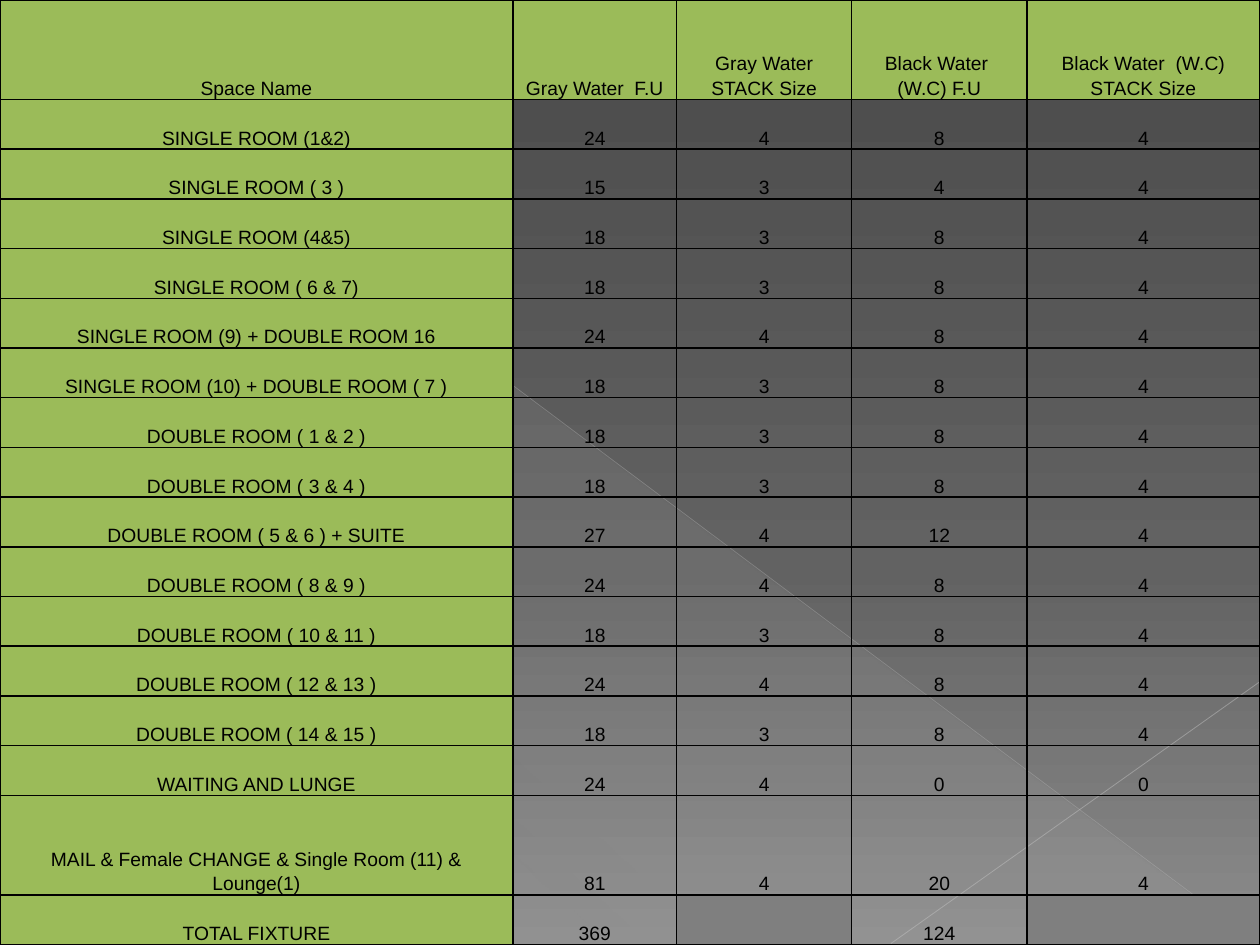
from typing import NamedTuple

from lxml.etree import SubElement
from pptx import Presentation
from pptx.dml.color import RGBColor
from pptx.enum.shapes import MSO_CONNECTOR, MSO_SHAPE
from pptx.enum.text import MSO_ANCHOR, PP_ALIGN
from pptx.oxml.ns import qn
from pptx.util import Cm, Pt

BLACK = RGBColor(0x00, 0x00, 0x00)
GREEN = RGBColor(0x9B, 0xBB, 0x59)
GRAY = RGBColor(0x7F, 0x7F, 0x7F)
BG_TOP = RGBColor(0x4A, 0x4A, 0x4A)
BG_MIDDLE = RGBColor(0x62, 0x62, 0x62)
BG_BOTTOM = RGBColor(0x8C, 0x8C, 0x8C)
SHEEN = RGBColor(0xD2, 0xD2, 0xD2)
LONG_LINE = RGBColor(0xBF, 0xBF, 0xBF)
SHORT_LINE = RGBColor(0xC6, 0xC6, 0xC6)

WIDTH, HEIGHT = 25.4, 19.05
COL_WIDTHS = (10.34, 3.3, 3.53, 3.53, 4.7)


class Stop(NamedTuple):
    position: int
    color: RGBColor
    opacity: int = 100


class Diagonal(NamedTuple):
    x1: float
    y1: float
    x2: float
    y2: float
    color: RGBColor
    width: float
    opacity: int


class Row(NamedTuple):
    space: str
    gray_fu: str
    gray_stack: str
    black_fu: str
    black_stack: str
    height: int = 1  # in row units


DIAGONALS = (
    Diagonal(0, 0.03, 25.37, 19.02, LONG_LINE, 0.39, 35),
    Diagonal(25.4, 13.74, 17.96, 19.02, SHORT_LINE, 0.47, 45),
)

ROWS = (
    Row("Space Name", "Gray Water  F.U", "Gray Water STACK Size",
        "Black Water  (W.C) F.U", "Black Water  (W.C) STACK Size", 2),
    Row("SINGLE ROOM (1&2)", "24", "4", "8", "4"),
    Row("SINGLE ROOM ( 3 )", "15", "3", "4", "4"),
    Row("SINGLE ROOM (4&5)", "18", "3", "8", "4"),
    Row("SINGLE ROOM ( 6 & 7)", "18", "3", "8", "4"),
    Row("SINGLE ROOM (9) + DOUBLE ROOM 16", "24", "4", "8", "4"),
    Row("SINGLE ROOM (10) + DOUBLE ROOM ( 7 )", "18", "3", "8", "4"),
    Row("DOUBLE ROOM ( 1 & 2 )", "18", "3", "8", "4"),
    Row("DOUBLE ROOM ( 3 & 4 )", "18", "3", "8", "4"),
    Row("DOUBLE ROOM ( 5 & 6 ) + SUITE", "27", "4", "12", "4"),
    Row("DOUBLE ROOM ( 8 & 9 )", "24", "4", "8", "4"),
    Row("DOUBLE ROOM ( 10 & 11 )", "18", "3", "8", "4"),
    Row("DOUBLE ROOM ( 12 & 13 )", "24", "4", "8", "4"),
    Row("DOUBLE ROOM ( 14 & 15 )", "18", "3", "8", "4"),
    Row("WAITING AND LUNGE", "24", "4", "0", "0"),
    Row("MAIL & Female CHANGE & Single Room (11) & Lounge(1)",
        "81", "4", "20", "4", 2),
    Row("TOTAL FIXTURE", "369", "", "124", ""),
)


def add_color(parent, color: RGBColor, opacity: int = 100) -> None:
    clr = SubElement(parent, qn("a:srgbClr"), val=str(color))
    if opacity < 100:
        SubElement(clr, qn("a:alpha"), val=str(opacity * 1000))


def set_gradient(fill, element, stops: tuple[Stop, ...], angle: int) -> None:
    """Give the fill inside element these stops; angle runs clockwise."""
    fill.gradient()
    grad = element.find(".//" + qn("a:gradFill"))
    for child in list(grad):
        grad.remove(child)
    gs_list = SubElement(grad, qn("a:gsLst"))
    for stop in stops:
        gs = SubElement(gs_list, qn("a:gs"), pos=str(stop.position * 1000))
        add_color(gs, stop.color, stop.opacity)
    SubElement(grad, qn("a:lin"), ang=str(angle * 60000), scaled="0")


def add_diagonal(s, d: Diagonal) -> None:
    line = s.shapes.add_connector(
        MSO_CONNECTOR.STRAIGHT, Cm(d.x1), Cm(d.y1), Cm(d.x2), Cm(d.y2))
    line.line.width = Pt(d.width)
    line.line.fill.solid()
    solid = line.element.spPr.find(".//" + qn("a:solidFill"))
    for child in list(solid):
        solid.remove(child)
    add_color(solid, d.color, d.opacity)
    SubElement(line.element.spPr, qn("a:effectLst"))


def format_cell(cell, text: str, is_label: bool) -> None:
    cell.margin_left = cell.margin_right = Cm(0.18)
    cell.margin_top = cell.margin_bottom = 0
    cell.vertical_anchor = MSO_ANCHOR.BOTTOM

    # Borders come before the fill in the cell properties
    tc_pr = cell._tc.get_or_add_tcPr()
    for side in ("lnL", "lnR", "lnT", "lnB"):
        ln = SubElement(tc_pr, qn(f"a:{side}"), w=str(Pt(1)))
        add_color(SubElement(ln, qn("a:solidFill")), BLACK)
    if is_label or not text:
        cell.fill.solid()
        cell.fill.fore_color.rgb = GREEN if is_label else GRAY
    else:
        cell.fill.background()

    if text:
        p = cell.text_frame.paragraphs[0]
        p.text = text
        p.alignment = PP_ALIGN.CENTER
        p.line_spacing = 1.15
        font = p.runs[0].font
        font.name, font.size = "Arial", Pt(11)
        font.color.rgb = BLACK


def add_fixture_table(s) -> None:
    frame = s.shapes.add_table(
        len(ROWS), len(COL_WIDTHS), 0, 0, Cm(WIDTH), Cm(HEIGHT))
    table = frame.table
    table.first_row = table.horz_banding = False
    for column, width in zip(table.columns, COL_WIDTHS):
        column.width = Cm(width)
    unit = HEIGHT / sum(row.height for row in ROWS)
    for i, row in enumerate(ROWS):
        table.rows[i].height = Cm(unit * row.height)
        for j, text in enumerate(row[:len(COL_WIDTHS)]):
            format_cell(table.cell(i, j), text, i == 0 or j == 0)


def main() -> None:
    prs = Presentation()
    prs.slide_width, prs.slide_height = Cm(WIDTH), Cm(HEIGHT)
    s = prs.slides.add_slide(prs.slide_layouts[6])

    # Background with a pale triangle and two diagonals
    set_gradient(s.background.fill, s.element,
                 (Stop(0, BG_TOP), Stop(60, BG_MIDDLE), Stop(100, BG_BOTTOM)), 90)
    sp = s.shapes.add_shape(
        MSO_SHAPE.RIGHT_TRIANGLE, Cm(0.03), Cm(0.05), Cm(25.35), Cm(19))
    sp.shadow.inherit = False
    sp.line.fill.background()
    set_gradient(sp.fill, sp.element,
                 (Stop(0, SHEEN, 10), Stop(70, SHEEN, 8), Stop(100, SHEEN, 1)), 133)
    for diagonal in DIAGONALS:
        add_diagonal(s, diagonal)

    # Fixture units and stack sizes
    add_fixture_table(s)
    prs.save("out.pptx")


if __name__ == "__main__":
    main()
